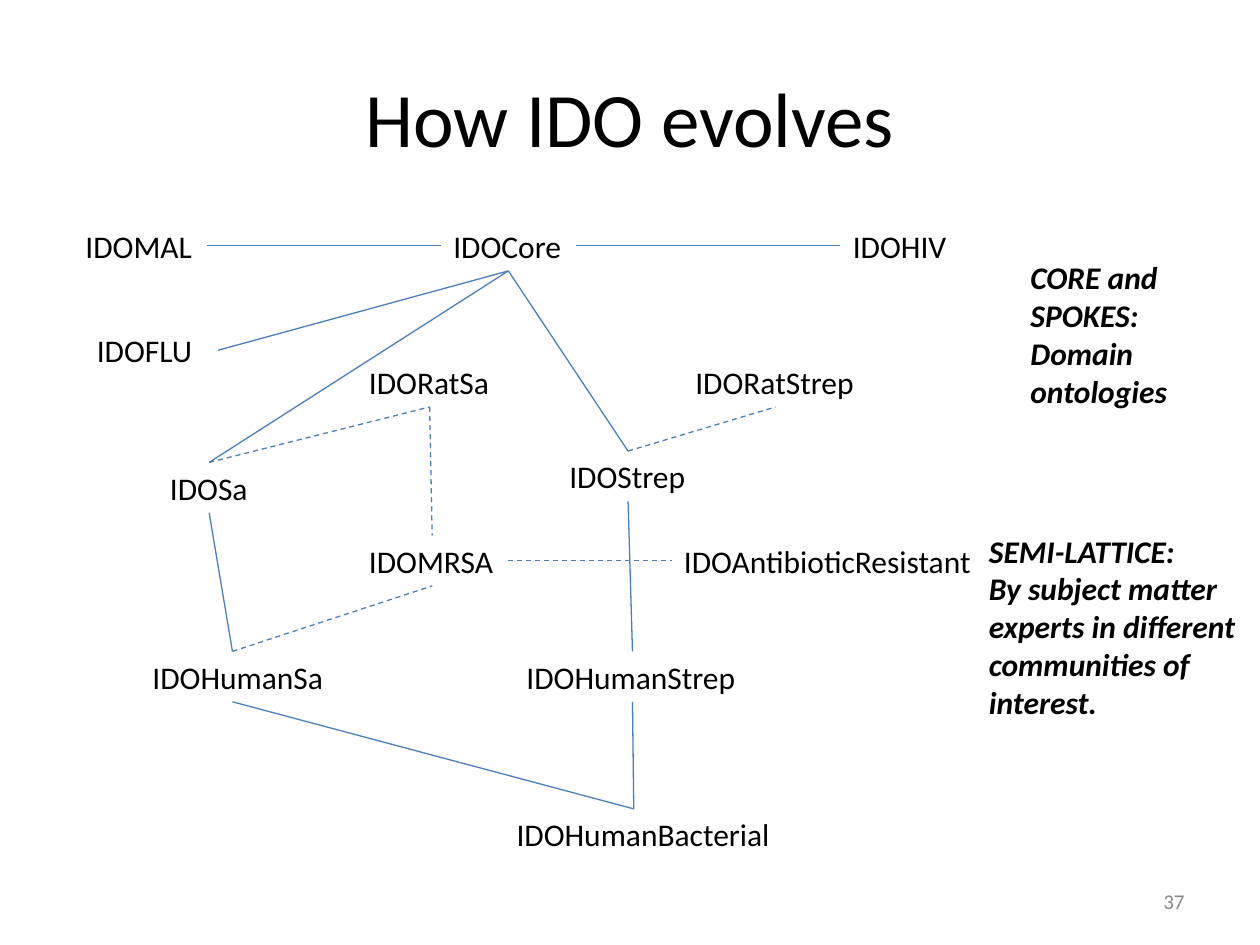
from lxml.etree import SubElement
from pptx import Presentation
from pptx.dml.color import RGBColor
from pptx.enum.dml import MSO_LINE
from pptx.enum.shapes import MSO_CONNECTOR
from pptx.enum.text import MSO_ANCHOR, PP_ALIGN
from pptx.oxml.ns import qn
from pptx.util import Inches, Pt

BLACK = RGBColor(0x00, 0x00, 0x00)
GRAY = RGBColor(0x89, 0x89, 0x89)
BLUE = RGBColor(0x4B, 0x7E, 0xBC)
FONT = "Calibri"
ROW_HEIGHT = 0.4
INSET = 0.1

# Ontologies: name -> left, top, width, extra indent
ontologies = {
    "IDOCore": (3.5, 1.75, 1.07, 0),
    "IDOMAL": (0.58, 1.75, 1.06, 0),
    "IDOHIV": (6.67, 1.75, 0.95, 0),
    "IDOFLU": (0.67, 2.58, 1.06, 0),
    "IDORatSa": (2.83, 2.83, 1.16, 0),
    "IDORatStrep": (5.42, 2.83, 1.47, 0),
    "IDOSa": (1.25, 3.67, 0.82, 0),
    "IDOStrep": (4.42, 3.58, 1.13, 0),
    "IDOMRSA": (2.83, 4.25, 1.2, 0),
    "IDOAntibioticResistant": (5.33, 4.25, 2.5, 0),
    "IDOHumanSa": (1, 5.17, 1.69, 0.11),
    "IDOHumanStrep": (4.08, 5.17, 1.88, 0),
    "IDOHumanBacterial": (3.83, 6.42, 2.4, 0.17),
}

# Links: ontology, side, ontology, side
solid_links = [
    ("IDOCore", "left", "IDOMAL", "right"),
    ("IDOHIV", "left", "IDOCore", "right"),
    ("IDOCore", "bottom", "IDOFLU", "right"),
    ("IDOCore", "bottom", "IDOSa", "top"),
    ("IDOCore", "bottom", "IDOStrep", "top"),
    ("IDOSa", "bottom", "IDOHumanSa", "top"),
    ("IDOStrep", "bottom", "IDOHumanStrep", "top"),
    ("IDOHumanSa", "bottom", "IDOHumanBacterial", "top"),
    ("IDOHumanStrep", "bottom", "IDOHumanBacterial", "top"),
]
dashed_links = [
    ("IDOSa", "top", "IDORatSa", "bottom"),
    ("IDOStrep", "top", "IDORatStrep", "bottom"),
    ("IDOHumanSa", "top", "IDOMRSA", "bottom"),
    ("IDORatSa", "bottom", "IDOMRSA", "top"),
    ("IDOMRSA", "right", "IDOAntibioticResistant", "left"),
]

# Side notes: left, top, width, height, lines
notes = [
    (8.08, 2, 1.33, 1.31, ["CORE and", "SPOKES:", "Domain", "ontologies"]),
    (7.75, 4.17, 2.25, 1.62, [
        "SEMI-LATTICE:",
        "By subject matter experts in different communities of interest.",
    ]),
]

presentation = Presentation()
presentation.slide_width = Inches(10)
presentation.slide_height = Inches(7.5)
slide = presentation.slides.add_slide(presentation.slide_layouts[6])


def add_text(left, top, width, height, lines, size=18, color=BLACK, wrap=True,
             indent=0, align=PP_ALIGN.LEFT, anchor=MSO_ANCHOR.TOP, emphasis=False):
    box = slide.shapes.add_textbox(Inches(left), Inches(top), Inches(width), Inches(height))
    frame = box.text_frame
    frame.text = "\n".join(lines)
    frame.word_wrap = wrap
    frame.vertical_anchor = anchor
    frame.margin_left = Inches(INSET + indent)
    for paragraph in frame.paragraphs:
        paragraph.alignment = align
        for run in paragraph.runs:
            run.font.name = FONT
            run.font.size = Pt(size)
            run.font.color.rgb = color
            if emphasis:
                run.font.bold = run.font.italic = True


def side_point(name, side):
    left, top, width, _ = ontologies[name]
    x_share, y_share = {"left": (0, 0.5), "right": (1, 0.5),
                        "top": (0.5, 0), "bottom": (0.5, 1)}[side]
    return Inches(left + x_share * width), Inches(top + y_share * ROW_HEIGHT)


def add_link(start, start_side, end, end_side, dashed):
    link = slide.shapes.add_connector(
        MSO_CONNECTOR.STRAIGHT, *side_point(start, start_side), *side_point(end, end_side))
    link.line.color.rgb = BLUE
    link.line.width = Pt(0.75)
    if dashed:
        link.line.dash_style = MSO_LINE.DASH
    SubElement(link._element.spPr, qn("a:effectLst"))


# Title
add_text(0.5, 0.3, 9, 1.25, ["How IDO evolves"], size=44,
         align=PP_ALIGN.CENTER, anchor=MSO_ANCHOR.MIDDLE)

# Ontology graph
for name, (left, top, width, indent) in ontologies.items():
    add_text(left, top, width, ROW_HEIGHT, [name], wrap=False, indent=indent)
for links, dashed in ((solid_links, False), (dashed_links, True)):
    for link_ends in links:
        add_link(*link_ends, dashed)

# Side notes
for left, top, width, height, lines in notes:
    add_text(left, top, width, height, lines, emphasis=True)

# Slide number
add_text(7.17, 6.95, 2.33, 0.4, ["37"], size=12, color=GRAY,
         align=PP_ALIGN.RIGHT, anchor=MSO_ANCHOR.MIDDLE)

presentation.save("out.pptx")
